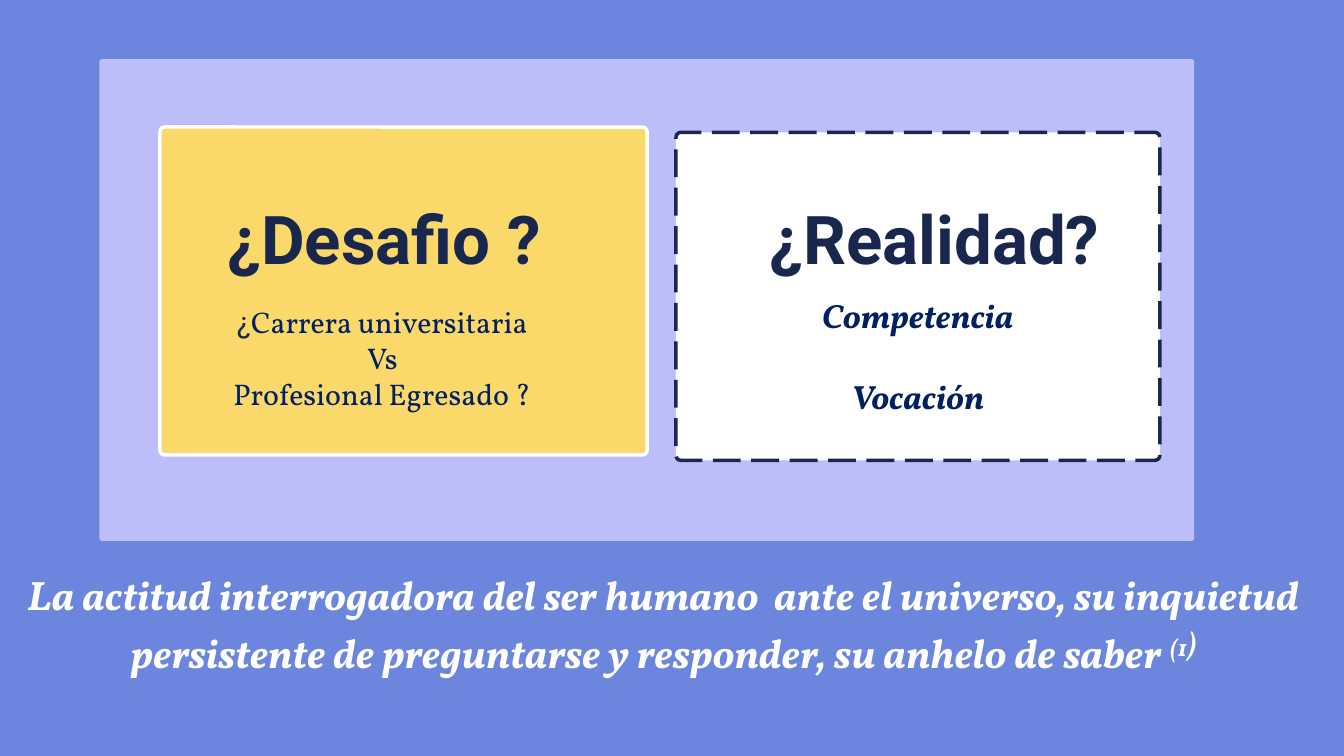
"""Build the slide that sets the challenge of a degree against its reality."""
from dataclasses import dataclass
from typing import Optional

from pptx import Presentation
from pptx.dml.color import RGBColor
from pptx.enum.dml import MSO_LINE
from pptx.enum.shapes import MSO_SHAPE
from pptx.enum.text import PP_ALIGN
from pptx.util import Inches, Pt

ROUNDED = MSO_SHAPE.ROUNDED_RECTANGLE
CENTER = PP_ALIGN.CENTER
DASHED = MSO_LINE.LONG_DASH
SOLID = MSO_LINE.SOLID
COLUMNS, ROWS = 20, 11.25
SLIDE_WIDTH, SLIDE_HEIGHT = Inches(20), Inches(11.25)
BLANK_LAYOUT = 6


@dataclass(frozen=True)
class Theme:
    """Colours, fonts and type sizes of the slide."""
    background: str = "6C86DD"
    panel: str = "BCBEFA"
    yellow: str = "FBD86A"
    white: str = "FFFFFF"
    navy: str = "19274F"
    ink: str = "002060"
    heading_font: str = "Roboto"
    body_font: str = "Vollkorn"
    heading: float = 72
    heading_leading: float = 79.2
    question: float = 32
    answer: float = 36
    answer_gap: float = 43.4
    statement: float = 44
    closing: float = 54
    border: float = 3.75


THEME = Theme()


@dataclass(frozen=True)
class Area:
    """A place on the slide in grid columns and rows."""
    column: float
    row: float
    columns: float
    rows: float

    def lengths(self) -> tuple[int, int, int, int]:
        """Return left, top, width and height in slide units."""
        across, down = SLIDE_WIDTH / COLUMNS, SLIDE_HEIGHT / ROWS
        return (round(self.column * across), round(self.row * down),
                round(self.columns * across), round(self.rows * down))


@dataclass(frozen=True)
class Card:
    """A filled rectangle with slightly rounded corners."""
    area: Area
    fill: str
    radius: float
    border: Optional[str] = None
    dash: MSO_LINE = SOLID


@dataclass(frozen=True)
class Span:
    """A stretch of text in one style."""
    text: str
    size: float
    color: str
    font: str = THEME.body_font
    bold: bool = False
    italic: bool = False
    raised: bool = False


@dataclass(frozen=True)
class Passage:
    """Centred paragraphs in one area."""
    area: Area
    paragraphs: tuple[tuple[Span, ...], ...]
    padded: bool = False
    leading: Optional[float] = None
    gap: float = 0


def question(text: str) -> Span:
    """Return a line of the challenge card."""
    return Span(text, THEME.question, THEME.ink)


def answer(text: str) -> Span:
    """Return a line of the reality card."""
    return Span(text, THEME.answer, THEME.ink, bold=True, italic=True)


def statement(text: str, size: float = THEME.statement, raised: bool = False) -> Span:
    """Return a part of the closing statement."""
    return Span(text, size, THEME.white, bold=True, italic=True, raised=raised)


def heading(column: float, text: str) -> Passage:
    """Return a card heading that starts at the given column."""
    title = Span(text, THEME.heading, THEME.navy, THEME.heading_font, bold=True)
    return Passage(Area(column, 3.04, 7.5, 1.11), ((title,),),
                   leading=THEME.heading_leading)


CARDS = (
    Card(Area(1.48, 0.88, 16.29, 7.17), THEME.panel, 0.04),
    Card(Area(2.38, 1.89, 7.25, 4.88), THEME.yellow, 0.07, THEME.white),
    Card(Area(10.06, 1.97, 7.2, 4.88), THEME.white, 0.07, THEME.navy, DASHED),
)

PASSAGES = (
    Passage(Area(1.94, 4.52, 7.5, 2.15), (
        (Span("¿", THEME.question, THEME.navy, THEME.heading_font),
         question("Carrera universitaria")),
        (question("Vs"),),
        (question("Profesional Egresado ?"),),
    )),
    heading(1.97, "¿Desafio ?"),
    heading(10.16, "¿Realidad?"),
    Passage(Area(10.85, 4.34, 5.61, 1.92),
            ((answer("Competencia"),), (answer("Vocación"),)),
            padded=True, gap=THEME.answer_gap),
    Passage(Area(0.25, 8.42, 19.25, 1.58), ((
        statement("La actitud interrogadora del ser humano  ante el universo, "
                  "su inquietud persistente de preguntarse y responder, "
                  "su anhelo de saber "),
        statement("(1", raised=True),
        statement(")", THEME.closing, raised=True),
    ),), padded=True),
)


def draw_card(slide, card: Card) -> None:
    """Draw one rounded card."""
    panel = slide.shapes.add_shape(ROUNDED, *card.area.lengths())
    panel.adjustments[0] = card.radius / min(card.area.columns, card.area.rows)
    panel.shadow.inherit = False
    panel.fill.solid()
    panel.fill.fore_color.rgb = RGBColor.from_string(card.fill)
    if card.border is None:
        panel.line.fill.background()
        return
    panel.line.color.rgb = RGBColor.from_string(card.border)
    panel.line.width = Pt(THEME.border)
    panel.line.dash_style = card.dash


def write_span(paragraph, span: Span) -> None:
    """Add one styled run to a paragraph."""
    run = paragraph.add_run()
    run.text = span.text
    run.font.name = span.font
    run.font.size = Pt(span.size)
    run.font.bold = span.bold
    run.font.italic = span.italic
    run.font.color.rgb = RGBColor.from_string(span.color)
    if span.raised:
        run.font._element.set("baseline", "30000")


def write_passage(slide, passage: Passage) -> None:
    """Write centred paragraphs into a text box."""
    frame = slide.shapes.add_textbox(*passage.area.lengths()).text_frame
    frame.word_wrap = True
    if not passage.padded:
        frame.margin_left = frame.margin_right = 0
        frame.margin_top = frame.margin_bottom = 0
    for index, spans in enumerate(passage.paragraphs):
        paragraph = frame.add_paragraph() if index else frame.paragraphs[0]
        paragraph.alignment = CENTER
        if passage.leading:
            paragraph.line_spacing = Pt(passage.leading)
        if index and passage.gap:
            paragraph.space_before = Pt(passage.gap)
        for span in spans:
            write_span(paragraph, span)


def main() -> None:
    """Create the presentation and save it."""
    deck = Presentation()
    deck.slide_width, deck.slide_height = SLIDE_WIDTH, SLIDE_HEIGHT
    slide = deck.slides.add_slide(deck.slide_layouts[BLANK_LAYOUT])
    slide.background.fill.solid()
    slide.background.fill.fore_color.rgb = RGBColor.from_string(THEME.background)
    for card in CARDS:
        draw_card(slide, card)
    for passage in PASSAGES:
        write_passage(slide, passage)
    deck.save("out.pptx")


if __name__ == "__main__":
    main()
